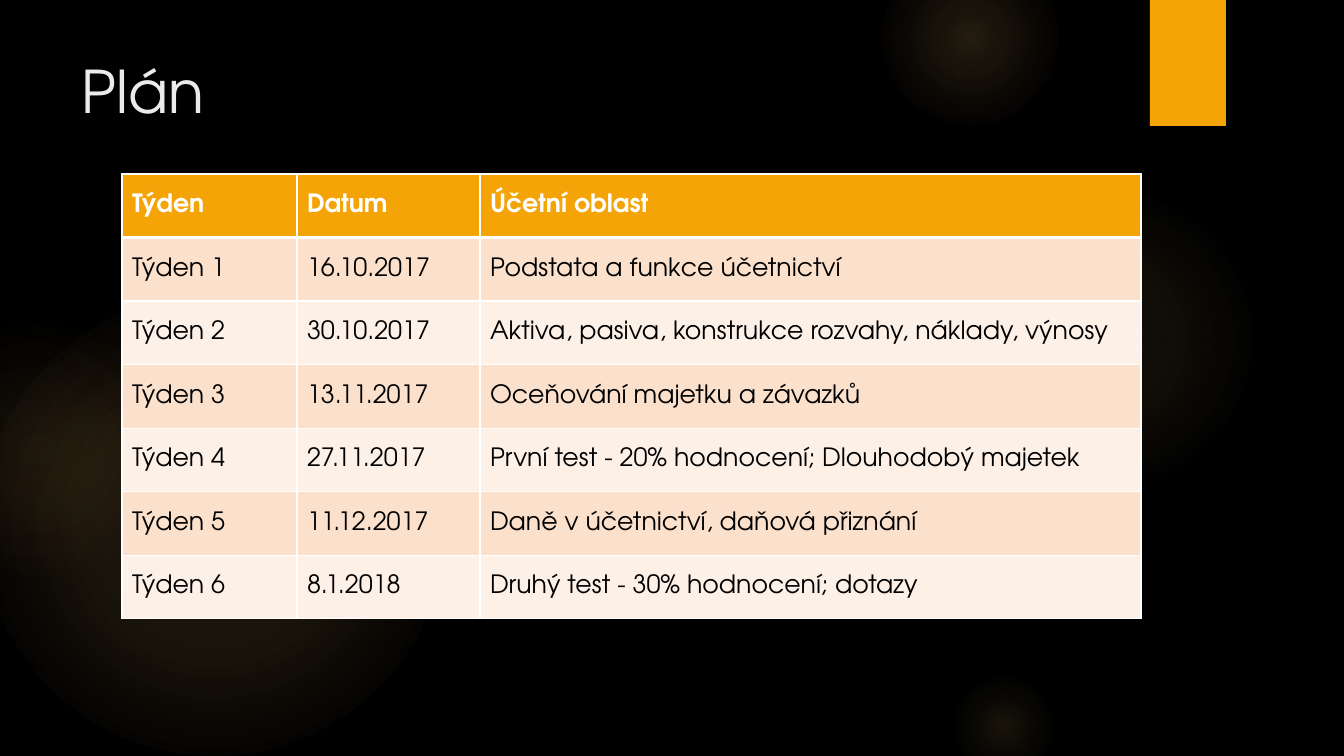
from lxml.etree import SubElement as sub
from pptx import Presentation
from pptx.dml.color import RGBColor as RGB
from pptx.enum.shapes import MSO_SHAPE as SHAPE
from pptx.enum.text import MSO_ANCHOR as ANCHOR
from pptx.oxml.ns import qn
from pptx.util import Pt

SCALE = 914400 / 100.8
FONT = "TeX Gyre Adventor"

BLACK = RGB(0, 0, 0)
WHITE = RGB(255, 255, 255)
PALE = RGB(0xEB, 0xEB, 0xEB)
AMBER = RGB(0xF5, 0xA4, 0x08)
PEACH = RGB(0xFB, 0xE0, 0xCC)
CREAM = RGB(0xFD, 0xF0, 0xE7)
GOLD = RGB(0xFA, 0xC9, 0x6A)
CORAL = RGB(0xF5, 0x9B, 0x74)

TITLE = {"name": FONT, "size": Pt(42), "bold": False}
HEAD = {"name": FONT, "size": Pt(18), "bold": True}
BODY = {**HEAD, "bold": False}

# Left, top, size, then stops: (position %, colour, opacity %)
GLOWS = [
    (-17, 294, 462, [(0, GOLD, 11), (36, GOLD, 10), (75, GOLD, 0)]),
    (-93, 320, 260, [(0, GOLD, 8), (36, GOLD, 5), (71, CORAL, 0)]),
    (949, 184, 310, [(0, GOLD, 7), (36, GOLD, 6), (69, GOLD, 0)]),
    (882, -50, 176, [(0, GOLD, 14), (36, GOLD, 7), (73, GOLD, 0)]),
    (949, 672, 109, [(0, GOLD, 10), (31, GOLD, 5), (66, GOLD, 0)]),
]

COLS = [175, 183, 661]
ROWS = [
    ("Týden", "Datum", "Účetní oblast"),
    ("Týden 1", "16.10.2017", "Podstata a funkce účetnictví"),
    ("Týden 2", "30.10.2017",
     "Aktiva, pasiva, konstrukce rozvahy, náklady, výnosy"),
    ("Týden 3", "13.11.2017", "Oceňování majetku a závazků"),
    ("Týden 4", "27.11.2017",
     "První test - 20% hodnocení; Dlouhodobý majetek"),
    ("Týden 5", "11.12.2017", "Daně v účetnictví, daňová přiznání"),
    ("Týden 6", "8.1.2018", "Druhý test - 30% hodnocení; dotazy"),
]


def px(*vals):
    return [round(val * SCALE) for val in vals]


def write(frame, text, form, color):
    run = frame.paragraphs[0].add_run()
    run.text = text
    for key, val in form.items():
        setattr(run.font, key, val)
    run.font.color.rgb = color


def add_shape(slide, kind, box, color):
    shape = slide.shapes.add_shape(kind, *px(*box))
    shape.shadow.inherit = False
    shape.fill.solid()
    shape.fill.fore_color.rgb = color
    shape.line.fill.background()
    return shape


def add_glow(slide, left, top, size, stops):
    glow = add_shape(slide, SHAPE.OVAL, (left, top, size, size), GOLD)
    solid = glow._element.spPr.find(qn("a:solidFill"))
    # The radial fill takes the place of the solid one
    grad = solid.makeelement(qn("a:gradFill"), {"rotWithShape": "1"})
    solid.getparent().replace(solid, grad)
    stop_list = sub(grad, qn("a:gsLst"))
    for pos, color, alpha in stops:
        stop = sub(stop_list, qn("a:gs"), pos=str(pos * 1000))
        tint = sub(stop, qn("a:srgbClr"), val=str(color))
        sub(tint, qn("a:alpha"), val=str(alpha * 1000))
    radial = sub(grad, qn("a:path"), {"path": "circle"})
    sub(radial, qn("a:fillToRect"), {side: "50000" for side in "ltrb"})


def add_title(slide, text):
    box = slide.shapes.add_textbox(*px(72, 50, 1037, 154))
    box.text_frame.word_wrap = True
    write(box.text_frame, text, TITLE, PALE)


def add_border(cell, row):
    # A thick rule parts the header from the body
    wide = {0: "lnB", 1: "lnT"}.get(row)
    props = cell._tc.get_or_add_tcPr()
    for side in ("lnL", "lnR", "lnT", "lnB"):
        width = Pt(3 if side == wide else 1)
        line = sub(props, qn("a:" + side), w=str(width))
        sub(sub(line, qn("a:solidFill")), qn("a:srgbClr"), val=str(WHITE))


def add_plan(slide):
    box = px(122, 174, sum(COLS), 445)
    table = slide.shapes.add_table(len(ROWS), len(COLS), *box).table
    for col, width in zip(table.columns, px(*COLS)):
        col.width = width
    for i, texts in enumerate(ROWS):
        form, ink = (BODY, BLACK) if i else (HEAD, WHITE)
        back = (PEACH if i % 2 else CREAM) if i else AMBER
        for j, text in enumerate(texts):
            cell = table.cell(i, j)
            add_border(cell, i)
            cell.fill.solid()
            cell.fill.fore_color.rgb = back
            cell.vertical_anchor = ANCHOR.MIDDLE
            write(cell.text_frame, text, form, ink)


def main():
    deck = Presentation()
    deck.slide_width, deck.slide_height = px(1344, 756)
    slide = deck.slides.add_slide(deck.slide_layouts[6])

    # Backdrop
    slide.background.fill.solid()
    slide.background.fill.fore_color.rgb = BLACK
    for glow in GLOWS:
        add_glow(slide, *glow)
    add_shape(slide, SHAPE.RECTANGLE, (1150, 0, 76, 126), AMBER)

    # Content
    add_title(slide, "Plán")
    add_plan(slide)
    deck.save("out.pptx")


if __name__ == "__main__":
    main()
